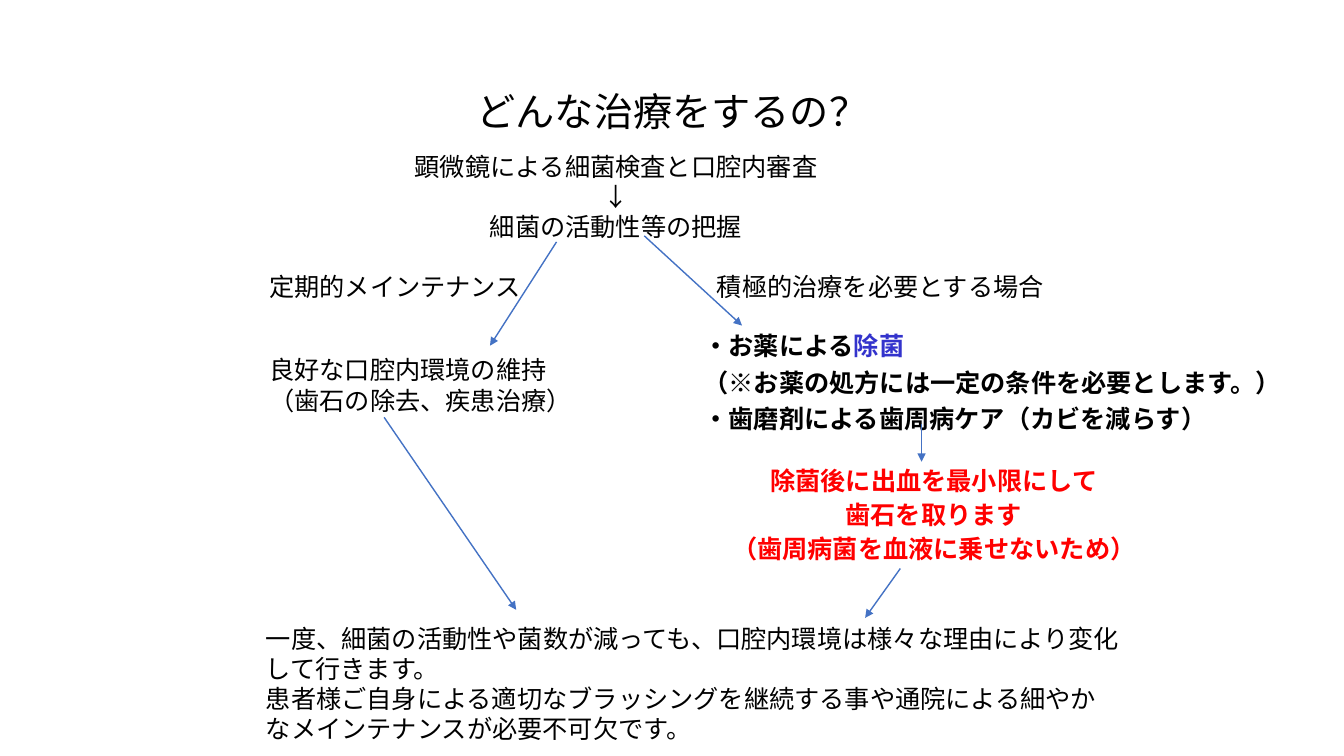
"""Build the treatment flow slide."""
import lxml.etree
import pptx
import pptx.dml.color
import pptx.enum.shapes
import pptx.enum.text
import pptx.oxml.ns
import pptx.util

COLORS = {"text": "000000", "accent": "3333CC", "warning": "FF0000", "arrow": "4472C4"}
FONT = "Noto Sans CJK JP"
WIDTH, HEIGHT = pptx.util.Inches(13.33), pptx.util.Inches(7.5)
ALIGN = pptx.enum.text.PP_ALIGN


def rgb(name):
    """Look up a named colour."""
    return pptx.dml.color.RGBColor.from_string(COLORS[name])


def across(share):
    """Turn a percentage of the slide width into a length."""
    return round(WIDTH * share / 100)


def down(share):
    """Turn a percentage of the slide height into a length."""
    return round(HEIGHT * share / 100)


def area(left, top, width, height):
    """Turn percentages of the slide into a rectangle."""
    return across(left), down(top), across(width), down(height)


def add_element(parent, tag, **attributes):
    """Append a drawing element to a parent element."""
    return lxml.etree.SubElement(parent, pptx.oxml.ns.qn(tag), attributes)


def add_span(para, text, color="text", size=18, bold=False):
    """Add one formatted run to a paragraph."""
    span = para.add_run()
    span.text = text
    span.font.size = pptx.util.Pt(size)
    span.font.bold = bold
    span.font.name = FONT
    span.font.color.rgb = rgb(color)
    add_element(span.font._element, "a:ea", typeface=FONT)


def add_title(page, text):
    """Place and format the title placeholder."""
    title = page.shapes.title
    title.left, title.top, title.width, title.height = area(6.9, 5.33, 86.27, 19.33)
    title.text_frame.vertical_anchor = pptx.enum.text.MSO_ANCHOR.MIDDLE
    para = title.text_frame.paragraphs[0]
    para.alignment = ALIGN.CENTER
    para.line_spacing = 0.9
    add_span(para, text, size=28)


def add_text(page, place, lines, align=ALIGN.LEFT, wrap=True, gap=0, bold=False):
    """Add a text box whose lines are lists of (text, colour) runs."""
    box = page.shapes.add_textbox(*area(*place))
    frame = box.text_frame
    frame.word_wrap = wrap
    for index, spans in enumerate(lines):
        para = frame.add_paragraph() if index else frame.paragraphs[0]
        para.alignment = align
        if index and gap:
            para.space_before = pptx.util.Pt(gap)
        for text, color in spans:
            add_span(para, text, color, bold=bold)


def plain(*texts, color="text"):
    """Make single-run lines in one colour."""
    return [[(text, color)] for text in texts]


def add_arrow(page, start, end, weight=1):
    """Draw an arrow between two points given in percentages."""
    arrow = page.shapes.add_connector(
        pptx.enum.shapes.MSO_CONNECTOR.STRAIGHT,
        across(start[0]), down(start[1]), across(end[0]), down(end[1]))
    arrow.line.color.rgb = rgb("arrow")
    arrow.line.width = pptx.util.Pt(weight)
    add_element(arrow.line._get_or_add_ln(), "a:tailEnd", type="triangle")
    add_element(arrow._element.spPr, "a:effectLst")


def main():
    """Build and save the slide."""
    deck = pptx.Presentation()
    deck.slide_width, deck.slide_height = WIDTH, HEIGHT
    page = deck.slides.add_slide(deck.slide_layouts[5])
    add_title(page, "どんな治療をするの？")

    add_text(page, (29.93, 19.33, 31.8, 17.47),
             plain("顕微鏡による細菌検査と口腔内審査", "↓", "細菌の活動性等の把握"),
             align=ALIGN.CENTER, wrap=False)
    add_text(page, (19.3, 35.2, 20.5, 5.33), plain("定期的メインテナンス"), wrap=False)
    add_text(page, (52.6, 35.2, 26.1, 5.33), plain("積極的治療を必要とする場合"), wrap=False)
    add_text(page, (19.3, 46.27, 24.2, 9.47),
             plain("良好な口腔内環境の維持", "（歯石の除去、疾患治療）"), wrap=False)
    medicine = [[("・お薬による", "text"), ("除菌", "accent")]]
    medicine += plain("（※お薬の処方には一定の条件を必要とします。）",
                      "・歯磨剤による歯周病ケア（カビを減らす）")
    add_text(page, (51.6, 43.07, 48.4, 15.33), medicine, gap=4.5, bold=True)
    add_text(page, (44.5, 60.93, 49.96, 14.27),
             plain("除菌後に出血を最小限にして", "歯石を取ります",
                   "（歯周病菌を血液に乗せないため）", color="warning"),
             align=ALIGN.CENTER, gap=2.5, bold=True)
    add_text(page, (19.05, 81.73, 65.1, 17.47), plain(
        "一度、細菌の活動性や菌数が減っても、口腔内環境は様々な理由により変化して行きます。",
        "患者様ご自身による適切なブラッシングを継続する事や通院による細やかなメインテナンスが必要不可欠です。"))

    add_arrow(page, (47.94, 31.2), (55.21, 43.07))
    add_arrow(page, (41.41, 32), (36.46, 45.73))
    add_arrow(page, (68.57, 56.13), (68.57, 61.07), weight=0.5)
    add_arrow(page, (28.58, 55.2), (38.41, 80.67))
    add_arrow(page, (66.99, 75.2), (64.37, 81.73))
    deck.save("out.pptx")


if __name__ == "__main__":
    main()
